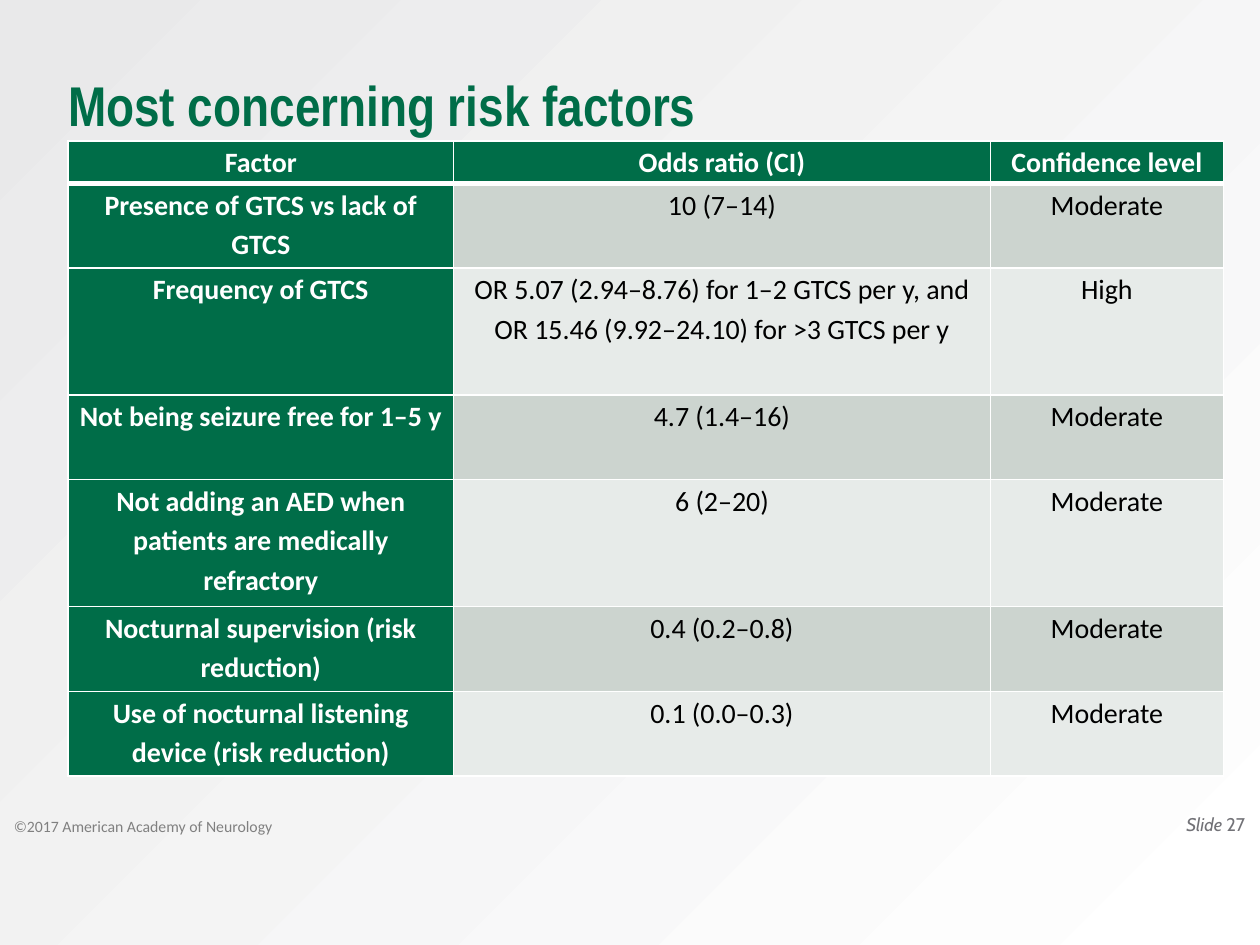
"""Build the slide on the most concerning risk factors, with its table of odds ratios."""
import pptx
import pptx.dml.color
import pptx.enum.text
import pptx.oxml
import pptx.oxml.ns
import pptx.util

GREEN = pptx.dml.color.RGBColor(0x00, 0x6D, 0x48)
BAND_DARK = pptx.dml.color.RGBColor(0xCC, 0xD4, 0xCF)
BAND_LIGHT = pptx.dml.color.RGBColor(0xE7, 0xEB, 0xE9)
WHITE = pptx.dml.color.RGBColor(0xFF, 0xFF, 0xFF)
BLACK = pptx.dml.color.RGBColor(0x00, 0x00, 0x00)
PALE_GREY = pptx.dml.color.RGBColor(0xE9, 0xE9, 0xEA)
COPYRIGHT_GREY = pptx.dml.color.RGBColor(0x80, 0x80, 0x80)
NUMBER_GREY = pptx.dml.color.RGBColor(0x72, 0x72, 0x77)

PP_ALIGN = pptx.enum.text.PP_ALIGN
ANCHOR = pptx.enum.text.MSO_ANCHOR
NS = pptx.oxml.ns.nsdecls("a")

deck = pptx.Presentation()
deck.slide_width = pptx.util.Inches(10)
deck.slide_height = pptx.util.Inches(7.5)
PERCENT = deck.slide_width // 100
LINE = 3.36


def share(*percents):
    """Turn percentages of the slide width into lengths."""
    return [round(percent * PERCENT) for percent in percents]


def style(paragraph, font_name, size, colour, bold=False):
    """Set the font of a whole paragraph."""
    paragraph.font.name = font_name
    paragraph.font.size = pptx.util.Pt(size)
    paragraph.font.color.rgb = colour
    paragraph.font.bold = bold


slide = deck.slides.add_slide(deck.slide_layouts[5])

backdrop = slide.background.fill
backdrop.gradient()
for stop, colour in zip(backdrop.gradient_stops, (WHITE, PALE_GREY)):
    stop.color.rgb = colour
gradient = slide.background._cSld.find(".//" + pptx.oxml.ns.qn("a:gradFill"))
gradient.replace(
    gradient.find(pptx.oxml.ns.qn("a:lin")),
    pptx.oxml.parse_xml(
        f'<a:path {NS} path="circle"><a:fillToRect l="100000" t="100000"/></a:path>'
    ),
)

title = slide.shapes.title
title.left, title.top, title.width, title.height = share(5.4, 4.1, 89.6, 7.1)
heading = title.text_frame
heading.text = "Most concerning risk factors"
heading.auto_size = pptx.enum.text.MSO_AUTO_SIZE.NONE
heading.paragraphs[0].alignment = PP_ALIGN.LEFT
heading.paragraphs[0].line_spacing = 0.9
style(heading.paragraphs[0], "Arial Narrow", 32, GREEN, True)

copyright_line = slide.shapes.add_textbox(*share(1.1, 56.5, 60, 10)).text_frame
copyright_line.word_wrap = True
copyright_line.text = "©2017 American Academy of Neurology"
style(copyright_line.paragraphs[0], "Calibri", 9, COPYRIGHT_GREY)

for frame in (heading, copyright_line):
    frame.vertical_anchor = ANCHOR.BOTTOM
    frame.margin_left = frame.margin_right = 0
    frame.margin_top = frame.margin_bottom = pptx.util.Inches(0.02)

page_number = slide.shapes.add_textbox(*share(76.5, 63.4, 23.3, 4)).text_frame
page_number.word_wrap = True
page_number.vertical_anchor = ANCHOR.MIDDLE
page_line = page_number.paragraphs[0]
page_line.alignment = PP_ALIGN.RIGHT
style(page_line, "Cabin", 10.5, NUMBER_GREY)
for words, italic in (("Slide ", True), ("27", False)):
    run = page_line.add_run()
    run.text = words
    run.font.italic = italic

column_shares = share(30.6, 42.6, 18.5)
factors = [
    (1, "Factor", "Odds ratio (CI)", "Confidence level"),
    (2, "Presence of GTCS vs lack of GTCS", "10 (7–14)", "Moderate"),
    (3, "Frequency of GTCS",
     "OR 5.07 (2.94–8.76) for 1–2 GTCS per y, and OR 15.46 (9.92–24.10) for >3 GTCS per y",
     "High"),
    (2, "Not being seizure free for 1–5 y", "4.7 (1.4–16)", "Moderate"),
    (3, "Not adding an AED when patients are medically refractory", "6 (2–20)", "Moderate"),
    (2, "Nocturnal supervision (risk reduction)", "0.4 (0.2–0.8)", "Moderate"),
    (2, "Use of nocturnal listening device (risk reduction)", "0.1 (0.0–0.3)", "Moderate"),
]
risk_table = slide.shapes.add_table(
    len(factors), len(column_shares), *share(5.4, 11.2, 91.7, 15 * LINE)
).table
for column, width in zip(risk_table.columns, column_shares):
    column.width = width

for row_index, (line_count, *entries) in enumerate(factors):
    risk_table.rows[row_index].height = share(line_count * LINE)[0]
    for column_index, entry in enumerate(entries):
        cell = risk_table.cell(row_index, column_index)
        is_header = row_index == 0 or column_index == 0
        cell.text = entry
        cell.margin_left = cell.margin_right = pptx.util.Inches(0.07)
        cell.margin_top = cell.margin_bottom = 0
        cell.vertical_anchor = ANCHOR.TOP
        paragraph = cell.text_frame.paragraphs[0]
        paragraph.alignment = PP_ALIGN.CENTER
        paragraph.line_spacing = 1.15
        style(paragraph, "Calibri", 16, WHITE if is_header else BLACK, is_header)
        borders = cell._tc.get_or_add_tcPr()
        for side in "LRTB":
            thick = (row_index, side) in ((0, "B"), (1, "T"))
            borders.append(pptx.oxml.parse_xml(
                f'<a:ln{side} {NS} w="{pptx.util.Pt(3 if thick else 1)}"><a:solidFill>'
                f'<a:srgbClr val="{WHITE}"/></a:solidFill></a:ln{side}>'
            ))
        cell.fill.solid()
        band = BAND_DARK if row_index % 2 else BAND_LIGHT
        cell.fill.fore_color.rgb = GREEN if is_header else band

deck.save("out.pptx")
